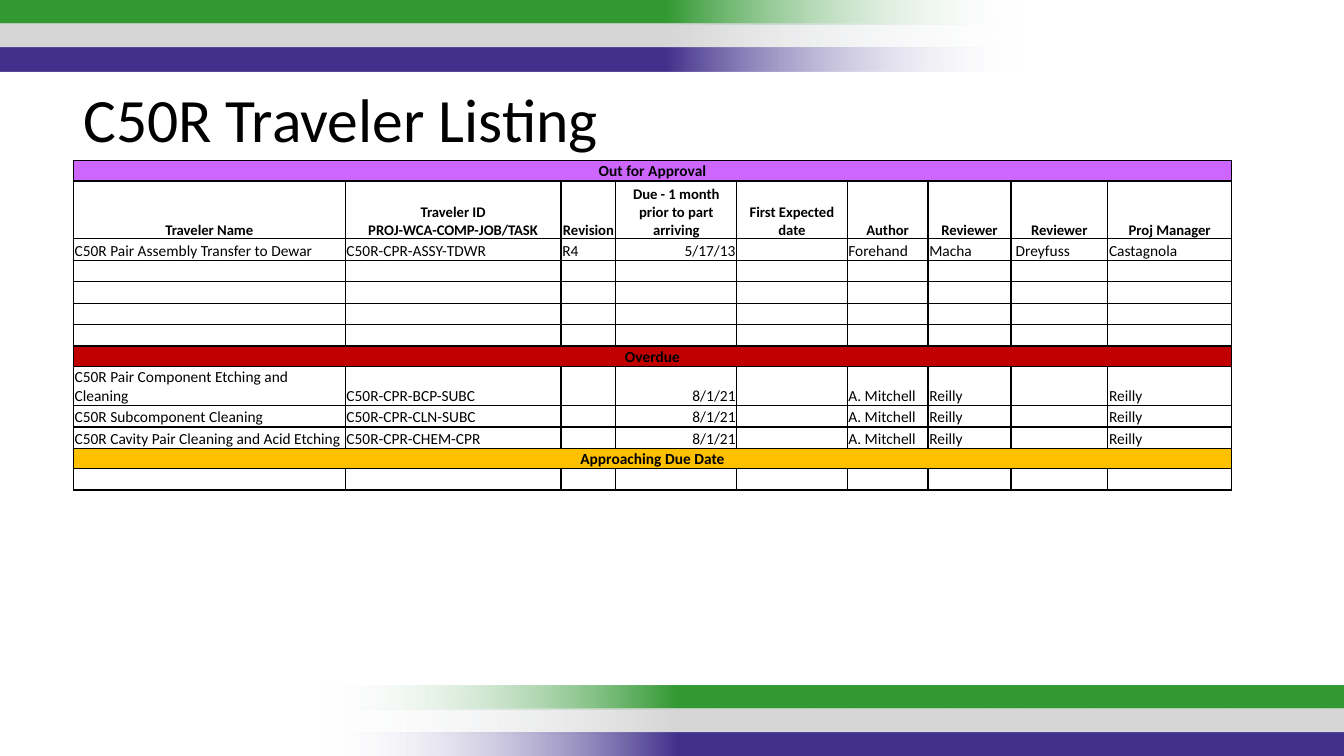
from lxml import etree
from pptx import Presentation
from pptx.dml.color import RGBColor
from pptx.enum.shapes import MSO_SHAPE
from pptx.enum.text import MSO_ANCHOR, PP_ALIGN
from pptx.oxml.ns import qn
from pptx.util import Cm, Pt

RECTANGLE = MSO_SHAPE.RECTANGLE
TOP, MIDDLE, BOTTOM = MSO_ANCHOR.TOP, MSO_ANCHOR.MIDDLE, MSO_ANCHOR.BOTTOM
LEFT, CENTER, RIGHT = PP_ALIGN.LEFT, PP_ALIGN.CENTER, PP_ALIGN.RIGHT

FONT = "Calibri"
BLACK = "000000"
FADE = "F7FAFD"
STRIPE_COLORS = ["339933", "D6D6D6", "42318C"]
STRIPE_WIDTH, STRIPE_HEIGHT, STRIPE_STEP = 25.83, 0.61, 0.595
BODY_SIZE, HEADER_SIZE = 11, 10.5
DUE_COLUMN = 3

COLUMN_WIDTHS = [6.85, 5.44, 1.38, 3.05, 2.78, 2.04, 2.09, 2.44, 3.12]
BAND_HEIGHT, HEADER_HEIGHT, LINE_HEIGHT, TWO_LINE_HEIGHT = 0.51, 1.46, 0.54, 0.98

HEADERS = [
    "Traveler Name", "Traveler ID\nPROJ-WCA-COMP-JOB/TASK", "Revision",
    "Due - 1 month prior to part arriving", "First Expected date",
    "Author", "Reviewer", "Reviewer", "Proj Manager",
]
APPROVALS = [
    ["C50R Pair Assembly Transfer to Dewar", "C50R-CPR-ASSY-TDWR", "R4", "5/17/13",
     "", "Forehand", "Macha", " Dreyfuss", "Castagnola"],
]
OVERDUE = [
    ("C50R Pair Component Etching and Cleaning", "C50R-CPR-BCP-SUBC", TWO_LINE_HEIGHT),
    ("C50R Subcomponent Cleaning", "C50R-CPR-CLN-SUBC", LINE_HEIGHT),
    ("C50R Cavity Pair Cleaning and Acid Etching", "C50R-CPR-CHEM-CPR", LINE_HEIGHT),
]
EMPTY_APPROVALS = 4


def color(value):
    return RGBColor.from_string(value)


def add_span(para, text, size, bold=False):
    span = para.add_run()
    span.text = text
    span.font.name = FONT
    span.font.size = Pt(size)
    span.font.bold = bold
    span.font.color.rgb = color(BLACK)


def add_stripe(page, left, top, value, rotation):
    stripe = page.shapes.add_shape(
        RECTANGLE, Cm(left), Cm(top), Cm(STRIPE_WIDTH), Cm(STRIPE_HEIGHT))
    stripe.shadow.inherit = False
    stripe.rotation = rotation
    stripe.line.fill.background()
    stripe.fill.gradient()
    stripe.fill.gradient_angle = 0
    stops = stripe._element.spPr.find(qn("a:gradFill")).find(qn("a:gsLst"))
    for stop in list(stops):
        stops.remove(stop)
    for position, shade in [(0, FADE), (35, value), (100, value)]:
        stop = etree.SubElement(stops, qn("a:gs"), pos=str(position * 1000))
        tint = etree.SubElement(stop, qn("a:srgbClr"), val=shade)
        if shade == FADE:
            etree.SubElement(tint, qn("a:alpha"), val="0")


def add_stripes(page, left, top, rotation):
    for index, value in enumerate(STRIPE_COLORS):
        add_stripe(page, left, top + index * STRIPE_STEP, value, rotation)


def add_title(page, text):
    box = page.shapes.add_textbox(Cm(1.85), Cm(1.91), Cm(26.19), Cm(2.14))
    frame = box.text_frame
    frame.word_wrap = True
    frame.vertical_anchor = TOP
    add_span(frame.paragraphs[0], text, 44)


def add_borders(cell):
    properties = cell._tc.get_or_add_tcPr()
    for index, side in enumerate(["a:lnL", "a:lnR", "a:lnT", "a:lnB"]):
        line = etree.Element(qn(side), w=str(Pt(1)))
        fill = etree.SubElement(line, qn("a:solidFill"))
        etree.SubElement(fill, qn("a:srgbClr"), val=BLACK)
        properties.insert(index, line)


def style_cell(cell, fill=None, anchor=BOTTOM):
    cell.margin_left = cell.margin_right = cell.margin_top = Cm(0.03)
    cell.margin_bottom = Cm(0)
    cell.vertical_anchor = anchor
    if fill:
        cell.fill.solid()
        cell.fill.fore_color.rgb = color(fill)
    else:
        cell.fill.background()
    add_borders(cell)


def write_cell(cell, text, size=BODY_SIZE, bold=False, align=LEFT):
    para = cell.text_frame.paragraphs[0]
    para.alignment = align
    if not text:
        etree.SubElement(para._p, qn("a:endParaRPr"), sz=str(size * 100))
        return
    for index, line in enumerate(text.split("\n")):
        if index:
            para.add_line_break()
        add_span(para, line, size, bold)


def fill_band(cells, text, fill, anchor=BOTTOM):
    for index, cell in enumerate(cells):
        style_cell(cell, fill, anchor)
        write_cell(cell, "" if index else text, bold=True, align=CENTER)
    cells[0].merge(cells[-1])


def fill_header(cells, texts):
    for cell, text in zip(cells, texts):
        style_cell(cell)
        write_cell(cell, text, HEADER_SIZE, True, CENTER)


def fill_record(cells, texts):
    for index, (cell, text) in enumerate(zip(cells, texts)):
        style_cell(cell)
        write_cell(cell, text, align=RIGHT if index == DUE_COLUMN else LEFT)


def listing_rows():
    empty = [""] * len(COLUMN_WIDTHS)
    rows = [
        (BAND_HEIGHT, fill_band, ("Out for Approval", "CC66FF")),
        (HEADER_HEIGHT, fill_header, (HEADERS,)),
    ]
    for record in APPROVALS + [empty] * EMPTY_APPROVALS:
        rows.append((LINE_HEIGHT, fill_record, (record,)))
    rows.append((BAND_HEIGHT, fill_band, ("Overdue", "C00000", MIDDLE)))
    for name, identifier, height in OVERDUE:
        record = [name, identifier, "", "8/1/21", "", "A. Mitchell", "Reilly", "", "Reilly"]
        rows.append((height, fill_record, (record,)))
    rows.append((BAND_HEIGHT, fill_band, ("Approaching Due Date", "FFC000")))
    rows.append((LINE_HEIGHT, fill_record, (empty,)))
    return rows


def add_listing(page):
    rows = listing_rows()
    frame = page.shapes.add_table(
        len(rows), len(COLUMN_WIDTHS), Cm(1.85), Cm(4.05),
        Cm(sum(COLUMN_WIDTHS)), Cm(sum(row[0] for row in rows)))
    table = frame.table
    table.first_row = False
    table.horz_banding = False
    for column, width in zip(table.columns, COLUMN_WIDTHS):
        column.width = Cm(width)
    for row, (height, fill_row, content) in zip(table.rows, rows):
        row.height = Cm(height)
        fill_row(list(row.cells), *content)


def main():
    deck = Presentation()
    deck.slide_width = Cm(33.87)
    deck.slide_height = Cm(19.05)
    page = deck.slides.add_slide(deck.slide_layouts[6])
    add_stripes(page, -0.03, 0, 180)
    add_stripes(page, 8.06, 17.27, 0)
    add_listing(page)
    add_title(page, "C50R Traveler Listing")
    deck.save("out.pptx")


if __name__ == "__main__":
    main()
